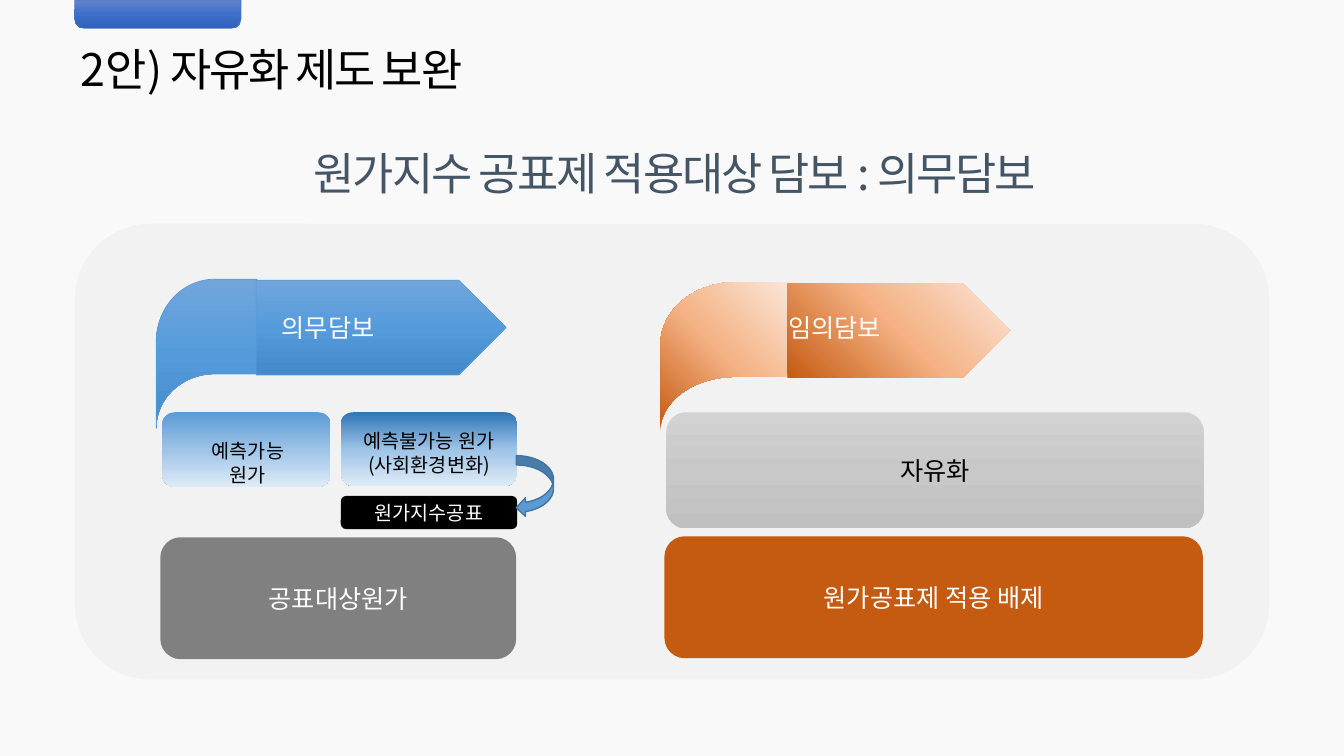
import copy
import math

from lxml import etree
from pptx import Presentation
from pptx import util as u
from pptx.dml.color import RGBColor
from pptx.enum import shapes, text
from pptx.oxml.ns import qn

COLORS = {
    "background": "F9F9F9", "panel": "F2F2F2", "heading": "445566",
    "black": "000000", "white": "FFFFFF", "gray": "808080",
    "orange": "C55A11", "blue": "5B9BD5", "arrow_edge": "43739E", "tab_edge": "4472C4",
}
GRADIENTS = {
    "tab": ("6183CB", "3E70CA", "3062BB"),
    "blue": ("71A6DB", "559BDB", "448ACA"),
    "unpredictable": ("2E75B6", "9DC3E6", "DEEBF7"),
    "predictable": ("5B9BD5", "9DC3E6", "DEEBF7"),
    "orange": ("C55A11", "F4B183", "FBE5D6"),
    "silver": ("D2D2D2", "C8C8C8", "C0C0C0"),
}
DOWN, UP_RIGHT = 270, 45
SHAPE = shapes.MSO_SHAPE
ALIGN = text.PP_ALIGN
ANCHOR = text.MSO_ANCHOR


class CoverageSlide:
    font = "Noto Sans CJK KR"
    columns, rows = 133.3, 75

    def __init__(self, deck):
        self.column = deck.slide_width / self.columns
        self.row = deck.slide_height / self.rows
        self.slide = deck.slides.add_slide(deck.slide_layouts[5])
        self.slide.background.fill.solid()
        self.slide.background.fill.fore_color.rgb = self.color("background")

    def color(self, name):
        return RGBColor.from_string(COLORS[name])

    def place(self, left, top, width, height):
        return (round(left * self.column), round(top * self.row),
                round(width * self.column), round(height * self.row))

    def typeset(self, shape, words, size, color, align=ALIGN.CENTER,
                anchor=ANCHOR.MIDDLE, tracking=None):
        frame = shape.text_frame
        frame.text = words
        frame.word_wrap = True
        frame.vertical_anchor = anchor
        for paragraph in frame.paragraphs:
            paragraph.alignment = align
            for run in paragraph.runs:
                run.font.size = u.Pt(size)
                run.font.color.rgb = self.color(color)
                run.font.name = self.font
                properties = run.font._element
                etree.SubElement(properties, qn("a:ea")).set("typeface", self.font)
                if tracking:
                    properties.set("spc", str(round(tracking * 100)))

    def paint(self, shape, fill=None, gradient=None, angle=DOWN, edge=None, weight=0.5):
        shape.shadow.inherit = False
        if gradient:
            shape.fill.gradient()
            shape.fill.gradient_angle = angle
            stops = shape.element.spPr.find(qn("a:gradFill")).find(qn("a:gsLst"))
            stops.append(copy.deepcopy(stops[-1]))
            for index, stop in enumerate(shape.fill.gradient_stops):
                stop.position = index / 2
                stop.color.rgb = RGBColor.from_string(GRADIENTS[gradient][index])
        else:
            shape.fill.solid()
            shape.fill.fore_color.rgb = self.color(fill)
        if edge:
            shape.line.color.rgb = self.color(edge)
            shape.line.width = u.Pt(weight)
        else:
            shape.line.fill.background()
        return shape

    def block(self, preset, box, **paint):
        return self.paint(self.slide.shapes.add_shape(preset, *self.place(*box)), **paint)

    def label(self, box, words, size, color, align=ALIGN.CENTER):
        caption = self.slide.shapes.add_textbox(*self.place(*box))
        self.typeset(caption, words, size, color, align, ANCHOR.TOP)

    def title(self, box, words):
        heading = self.slide.shapes.title
        heading.left, heading.top, heading.width, heading.height = self.place(*box)
        heading.text_frame.auto_size = text.MSO_AUTO_SIZE.NONE
        self.typeset(heading, words, 32, "black", anchor=ANCHOR.TOP, tracking=-1.5)
        self.slide.shapes.element.append(heading.element)

    def ribbon(self, box, **paint):
        left, top, width, height = self.place(*box)
        turn, upper, body = 0.58, 0.42, 0.635
        quarter = [math.radians(degree) for degree in range(0, 91, 3)]
        outer = [(turn * (1 - math.sin(a)), upper * (1 - math.cos(a))) for a in quarter]
        inner = [(turn * (1 - math.sin(a)), 1 - (1 - body) * math.cos(a))
                 for a in reversed(quarter)]
        outline = [(round(left + x * width), round(top + y * height))
                   for x, y in [(1, 0), *outer, *inner, (1, body)]]
        builder = self.slide.shapes.build_freeform(*outline[0])
        builder.add_line_segments(outline[1:])
        self.paint(builder.convert_to_shape(), **paint)


def main():
    deck = Presentation()
    deck.slide_width, deck.slide_height = u.Inches(13.33), u.Inches(7.5)
    page = CoverageSlide(deck)
    rounded = SHAPE.ROUNDED_RECTANGLE

    tab = page.block(SHAPE.ROUND_2_SAME_RECTANGLE, (7.4, 0, 16.5, 2.8),
                     gradient="tab", edge="tab_edge")
    tab.adjustments[0], tab.adjustments[1] = 0, 0.33
    subtitle = page.block(SHAPE.RECTANGLE, (9.7, 13.9, 114.5, 6.4), fill="background")
    page.typeset(subtitle, "원가지수 공표제 적용대상 담보 : 의무담보", 32, "heading", tracking=-1.5)
    page.title((6.2, 3.6, 41.5, 6.4), "2안) 자유화 제도 보완")
    page.block(rounded, (7.4, 22.2, 118.5, 45.2), fill="panel")

    page.block(rounded, (33.8, 40.9, 17.5, 7.3), gradient="unpredictable")
    page.label((34.1, 42.1, 16.9, 5.7), "예측불가능 원가\n(사회환경변화)", 14, "black")
    page.block(rounded, (16.1, 40.9, 16.7, 7.4), gradient="predictable")
    page.label((18.1, 43.1, 13, 3.4), "예측가능 원가", 14, "black")

    blue = {"gradient": "blue", "edge": "blue"}
    orange = {"gradient": "orange", "angle": UP_RIGHT}
    for ribbon, banner, caption, words, align, style in (
        ((15.5, 27.7, 10, 14.8), (25.4, 27.8, 24.8, 9.4),
         (18.4, 30.5, 28.3, 4), "의무담보", ALIGN.CENTER, blue),
        ((65.5, 28, 12.7, 14.8), (78.1, 28.1, 22.1, 9.4),
         (77.2, 30.5, 21.2, 4), "임의담보", ALIGN.LEFT, orange),
    ):
        page.ribbon(ribbon, **style)
        page.block(SHAPE.PENTAGON, banner, **style)
        page.label(caption, words, 18, "white", align)

    for box, words, size, color, style in (
        ((33.8, 49.2, 17.5, 3.3), "원가지수공표", 14, "white", {"fill": "black"}),
        ((15.9, 53.3, 35.3, 12.1), "공표대상원가", 18, "white", {"fill": "gray"}),
        ((66.1, 40.9, 53.3, 11.5), "자유화", 18, "black", {"gradient": "silver"}),
        ((65.9, 53.2, 53.4, 12.1), "원가공표제 적용 배제", 18, "white", {"fill": "orange"}),
    ):
        page.typeset(page.block(rounded, box, **style), words, size, color)

    page.block(SHAPE.CURVED_LEFT_ARROW, (51.2, 45.2, 3.7, 6.1),
               fill="blue", edge="arrow_edge", weight=1)
    deck.save("out.pptx")


if __name__ == "__main__":
    main()
